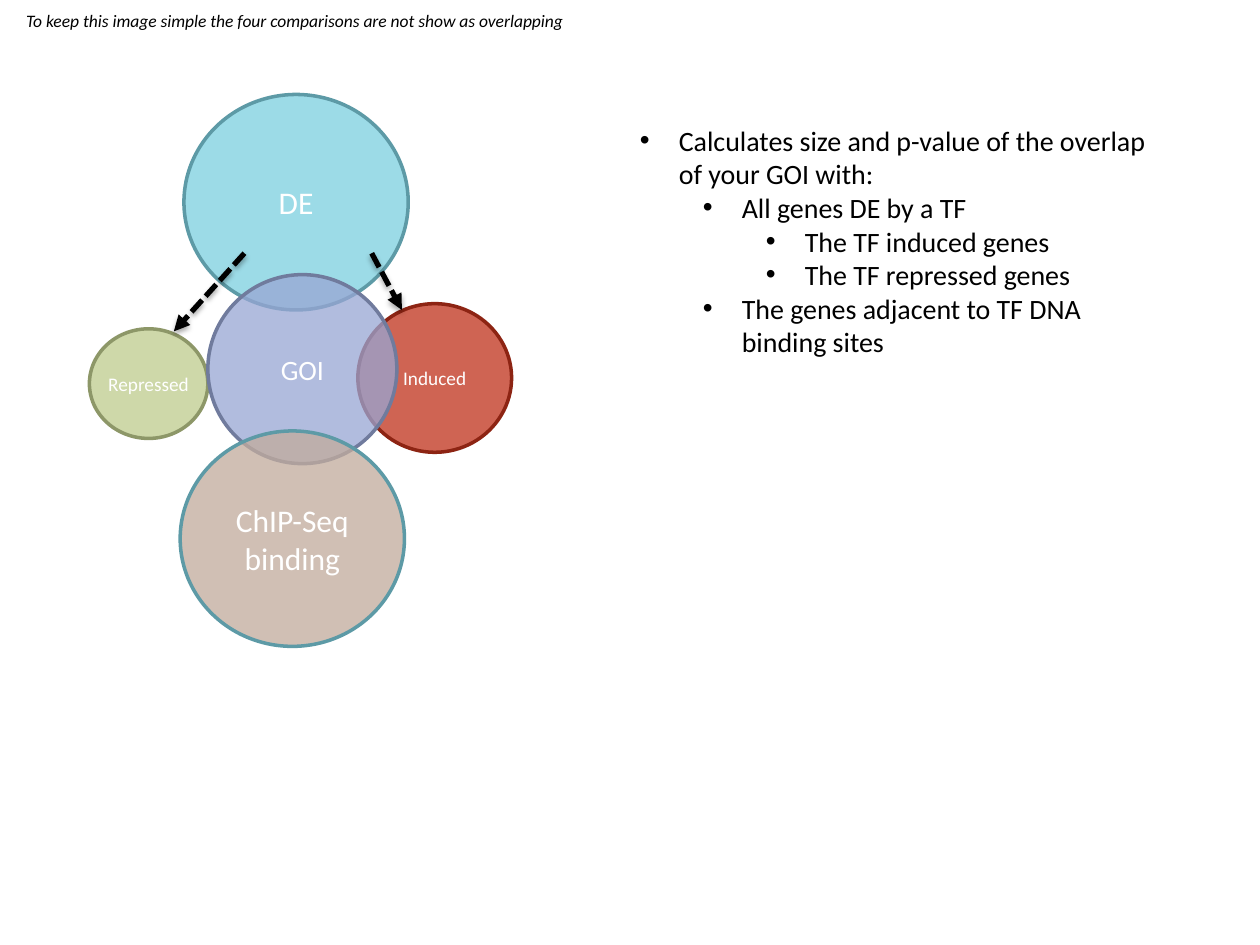
from lxml import etree
from pptx import Presentation
from pptx import util as u
from pptx.dml.color import RGBColor
from pptx.enum import dml, shapes, text
from pptx.oxml import ns

BLACK = RGBColor(0x00, 0x00, 0x00)
WHITE = RGBColor(0xFF, 0xFF, 0xFF)
CYAN = RGBColor(0x7E, 0xD0, 0xE0)
TEAL = RGBColor(0x5D, 0x9A, 0xA6)
GREEN = RGBColor(0xBE, 0xCC, 0x8D)
OLIVE = RGBColor(0x8D, 0x97, 0x68)
RED = RGBColor(0xBF, 0x31, 0x1A)
MAROON = RGBColor(0x8D, 0x24, 0x13)
LILAC = RGBColor(0x98, 0xA6, 0xD4)
SLATE = RGBColor(0x70, 0x7B, 0x9D)
TAN = RGBColor(0xC2, 0xAC, 0x9D)


def add(parent, tag, **attrs):
    """Append a DrawingML element and return it."""
    node = etree.SubElement(parent, ns.qn(tag))
    for key, val in attrs.items():
        node.set(key, str(val))
    return node


def write(par, words, size, color=BLACK, font="Calibri", italic=None, align=None):
    """Put one formatted run into a paragraph."""
    par.alignment = align
    run = par.add_run()
    run.text = words
    run.font.name, run.font.size = font, u.Pt(size)
    run.font.italic = italic
    run.font.color.rgb = color


class Board:
    def __init__(self, slide, font="Calibri"):
        self.slide, self.font = slide, font

    def circle(self, words, box, fill, edge, size, alpha=75, inset=None):
        oval = self.slide.shapes.add_shape(
            shapes.MSO_SHAPE.OVAL, *map(u.Inches, box))
        oval.shadow.inherit = False
        oval.fill.solid()
        oval.fill.fore_color.rgb = fill
        tint = oval._element.spPr.find(ns.qn("a:solidFill"))[0]
        add(tint, "a:alpha", val=alpha * 1000)
        oval.line.color.rgb, oval.line.width = edge, u.Pt(2)
        frame = oval.text_frame
        frame.word_wrap = True
        frame.vertical_anchor = text.MSO_ANCHOR.MIDDLE
        if inset is not None:
            frame.margin_left = frame.margin_right = u.Inches(inset)
            frame.margin_top = frame.margin_bottom = u.Inches(inset)
        write(frame.paragraphs[0], words, size, WHITE, self.font,
              align=text.PP_ALIGN.CENTER)

    def arrow(self, start, end):
        link = self.slide.shapes.add_connector(
            shapes.MSO_CONNECTOR.STRAIGHT, *map(u.Inches, start + end))
        line = link.line
        line.color.rgb, line.width = BLACK, u.Pt(3)
        line.dash_style = dml.MSO_LINE.SQUARE_DOT
        props = link._element.spPr
        add(props.find(ns.qn("a:ln")), "a:tailEnd", type="triangle")
        # Soft shadow straight below
        glow = add(add(props, "a:effectLst"), "a:outerShdw",
                   blurRad=u.Pt(3.1), dist=u.Pt(1.8), dir=90 * 60000,
                   rotWithShape=0)
        add(add(glow, "a:srgbClr", val=BLACK), "a:alpha", val=35000)

    def box(self, box, wrap=True):
        area = self.slide.shapes.add_textbox(*map(u.Inches, box))
        frame = area.text_frame
        frame.word_wrap = wrap
        frame.auto_size = text.MSO_AUTO_SIZE.SHAPE_TO_FIT_TEXT
        return frame

    def note(self, words, box, size):
        frame = self.box(box, wrap=False)
        write(frame.paragraphs[0], words, size, font=self.font, italic=True)

    def bullets(self, items, box, size, hang=0.31, step=0.5):
        frame = self.box(box)
        for i, (level, words) in enumerate(items):
            par = frame.add_paragraph() if i else frame.paragraphs[0]
            par.level = level
            props = par._p.get_or_add_pPr()
            props.set("marL", str(u.Inches(hang + step * level)))
            props.set("indent", str(u.Inches(-hang)))
            add(props, "a:buFont", typeface="Arial")
            add(props, "a:buChar", char="•")
            write(par, words, size, font=self.font)


def main():
    deck = Presentation()
    deck.slide_width, deck.slide_height = u.Inches(10), u.Inches(7.5)
    board = Board(deck.slides.add_slide(deck.slide_layouts[6]))

    # Expression gene sets
    board.circle("DE", (1.46, 0.75, 1.78, 1.71), CYAN, TEAL, 18, alpha=76)
    board.circle("Repressed", (0.71, 2.61, 0.94, 0.87), GREEN, OLIVE, 11, inset=0)
    board.circle("Induced", (2.84, 2.41, 1.22, 1.18), RED, MAROON, 11)

    # DE splits into induced and repressed
    board.arrow((2.95, 2.01), (3.19, 2.46))
    board.arrow((1.94, 2.01), (1.38, 2.63))

    # Genes of interest
    board.circle("GOI", (1.65, 2.18, 1.5, 1.5), LILAC, SLATE, 16)

    # Explanation
    board.bullets([
        (0, "Calculates size and p-value of the overlap of your GOI with:"),
        (1, "All genes DE by a TF"),
        (2, "The TF induced genes"),
        (2, "The TF repressed genes"),
        (1, "The genes adjacent to TF DNA binding sites"),
    ], (4.98, 0.93, 4.34, 3.6), 16)

    # Binding set and remark
    board.circle("ChIP-Seq binding", (1.43, 3.42, 1.78, 1.71), TAN, TEAL, 18,
                 alpha=76)
    board.note("To keep this image simple the four comparisons are not show "
               "as overlapping", (0.11, 0.03, 4.52, 0.27), 10)

    deck.save("out.pptx")


if __name__ == "__main__":
    main()
